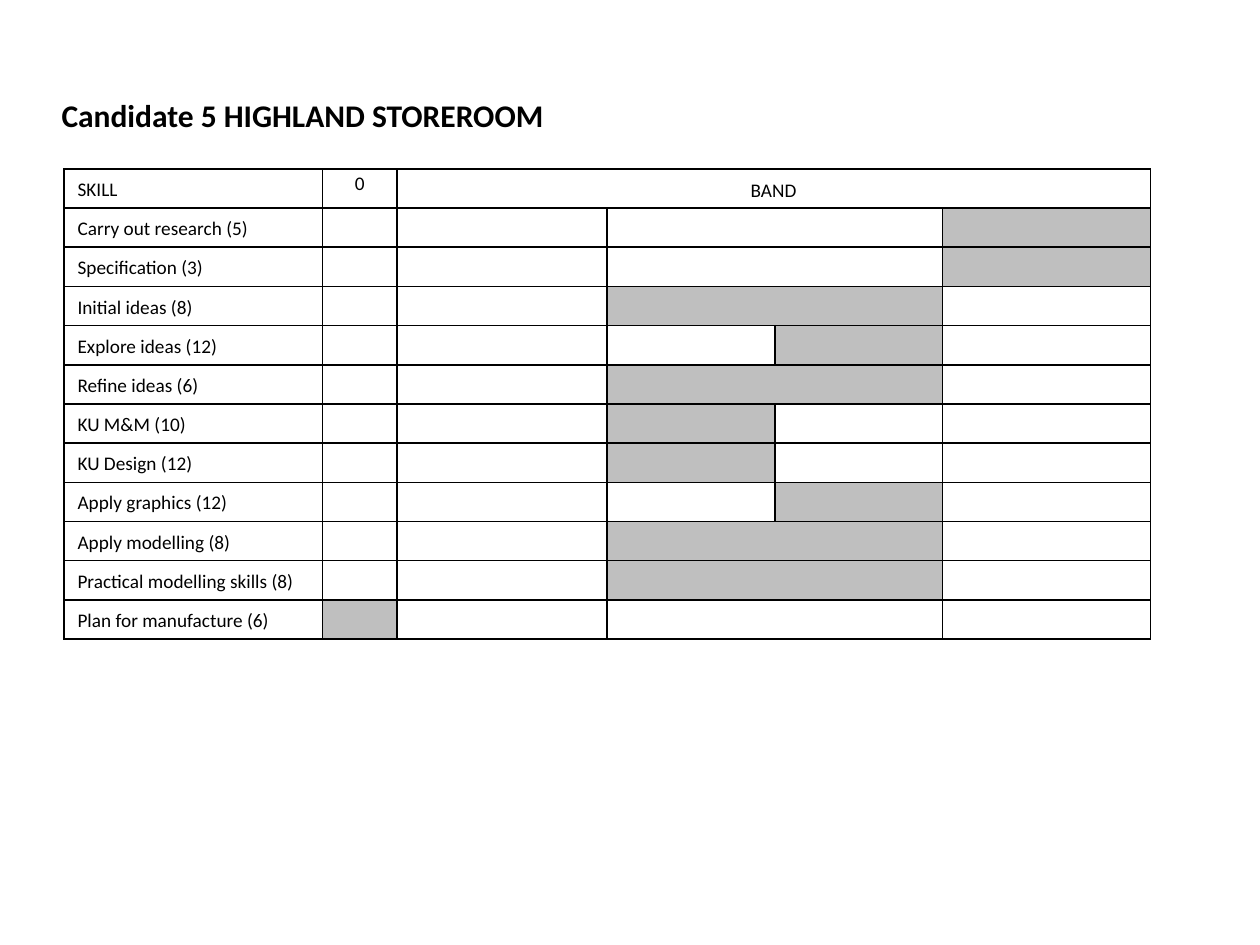
from dataclasses import dataclass

from lxml import etree
from pptx import Presentation
from pptx.dml.color import RGBColor
from pptx.enum.text import MSO_AUTO_SIZE, PP_ALIGN
from pptx.oxml.ns import qn
from pptx.util import Pt

CENTER, LEFT = PP_ALIGN.CENTER, PP_ALIGN.LEFT
FIT_SHAPE = MSO_AUTO_SIZE.SHAPE_TO_FIT_TEXT
FONT = "Calibri"
COLORS = {"ink": "000000", "paper": "FFFFFF", "awarded": "BFBFBF"}
COLUMN_WIDTHS = (147.6, 42.48, 120.24, 95.76, 95.76, 118.8)
ROW_HEIGHT = 22.4
ZERO, MIDDLE_LOW, MIDDLE_HIGH, TOP = 1, 3, 4, 5
MIDDLE = (MIDDLE_LOW, MIDDLE_HIGH)


@dataclass
class Skill:
    label: str
    awarded: tuple[int, ...]


@dataclass
class Margins:
    side: float = 0
    top: float = 0
    bottom: float = 0


LABEL_MARGINS = Margins(7.6, 3.2, 2.9)
BAND_MARGINS = Margins(7.2, 3.6, 2.9)
NO_MARGINS = Margins()

SKILLS = (
    Skill("Carry out research (5)", (TOP,)),
    Skill("Specification (3)", (TOP,)),
    Skill("Initial ideas (8)", MIDDLE),
    Skill("Explore ideas (12)", (MIDDLE_HIGH,)),
    Skill("Refine ideas (6)", MIDDLE),
    Skill("KU M&M (10)", (MIDDLE_LOW,)),
    Skill("KU Design (12)", (MIDDLE_LOW,)),
    Skill("Apply graphics (12)", (MIDDLE_HIGH,)),
    Skill("Apply modelling (8)", MIDDLE),
    Skill("Practical modelling skills (8)", MIDDLE),
    Skill("Plan for manufacture (6)", (ZERO,)),
)


def style_font(font, size: float, bold: bool = False) -> None:
    """Apply the slide typeface and ink colour."""
    font.name, font.size, font.bold = FONT, Pt(size), bold
    font.color.rgb = RGBColor.from_string(COLORS["ink"])


def add_title(slide, text: str) -> None:
    """Add the candidate heading."""
    shape = slide.shapes.add_textbox(Pt(28.08), Pt(51.12), Pt(298.08), Pt(28.8))
    frame = shape.text_frame
    frame.word_wrap, frame.auto_size = False, FIT_SHAPE
    frame.text = text
    style_font(frame.paragraphs[0].font, 18, True)


def format_cell(cell, fill: str) -> None:
    """Give a cell its borders, fill and empty margins."""
    properties = cell._tc.get_or_add_tcPr()
    for side in ("a:lnL", "a:lnR", "a:lnT", "a:lnB"):
        line = etree.SubElement(properties, qn(side), w=str(Pt(1)))
        solid = etree.SubElement(line, qn("a:solidFill"))
        etree.SubElement(solid, qn("a:srgbClr"), val=COLORS["ink"])
    cell.fill.solid()
    cell.fill.fore_color.rgb = RGBColor.from_string(COLORS[fill])
    set_margins(cell, NO_MARGINS)
    style_font(cell.text_frame.paragraphs[0].font, 11)


def set_margins(cell, margins: Margins) -> None:
    """Set the four insets of a cell."""
    cell.margin_left = cell.margin_right = Pt(margins.side)
    cell.margin_top, cell.margin_bottom = Pt(margins.top), Pt(margins.bottom)


def write_cell(cell, text: str, margins: Margins, alignment=LEFT) -> None:
    """Write one line of text into a cell."""
    set_margins(cell, margins)
    paragraph = cell.text_frame.paragraphs[0]
    paragraph.add_run().text = text
    paragraph.alignment, paragraph.line_spacing = alignment, 1.15


def add_skill_table(slide) -> None:
    """Add the grid of skills and awarded bands."""
    row_count = len(SKILLS) + 1
    table = slide.shapes.add_table(
        row_count, len(COLUMN_WIDTHS), Pt(36.72), Pt(96.48),
        Pt(sum(COLUMN_WIDTHS)), Pt(ROW_HEIGHT * row_count),
    ).table
    table.first_row = table.horz_banding = False
    for column, width in zip(table.columns, COLUMN_WIDTHS):
        column.width = Pt(width)
    for row_index, skill in enumerate((Skill("SKILL", ()), *SKILLS)):
        table.rows[row_index].height = Pt(ROW_HEIGHT)
        for column_index in range(len(COLUMN_WIDTHS)):
            fill = "awarded" if column_index in skill.awarded else "paper"
            format_cell(table.cell(row_index, column_index), fill)
        write_cell(table.cell(row_index, 0), skill.label, LABEL_MARGINS)
        split = len(set(MIDDLE) & set(skill.awarded)) == 1
        if row_index and not split:
            low, high = (table.cell(row_index, column) for column in MIDDLE)
            low.merge(high)
    table.cell(0, 2).merge(table.cell(0, TOP))
    write_cell(table.cell(0, ZERO), "0", NO_MARGINS, CENTER)
    write_cell(table.cell(0, 2), "BAND", BAND_MARGINS, CENTER)


def main() -> None:
    """Build and save the presentation."""
    presentation = Presentation()
    presentation.slide_width, presentation.slide_height = Pt(720), Pt(540)
    slide = presentation.slides.add_slide(presentation.slide_layouts[6])
    add_title(slide, "Candidate 5 HIGHLAND STOREROOM")
    add_skill_table(slide)
    presentation.save("out.pptx")


if __name__ == "__main__":
    main()
